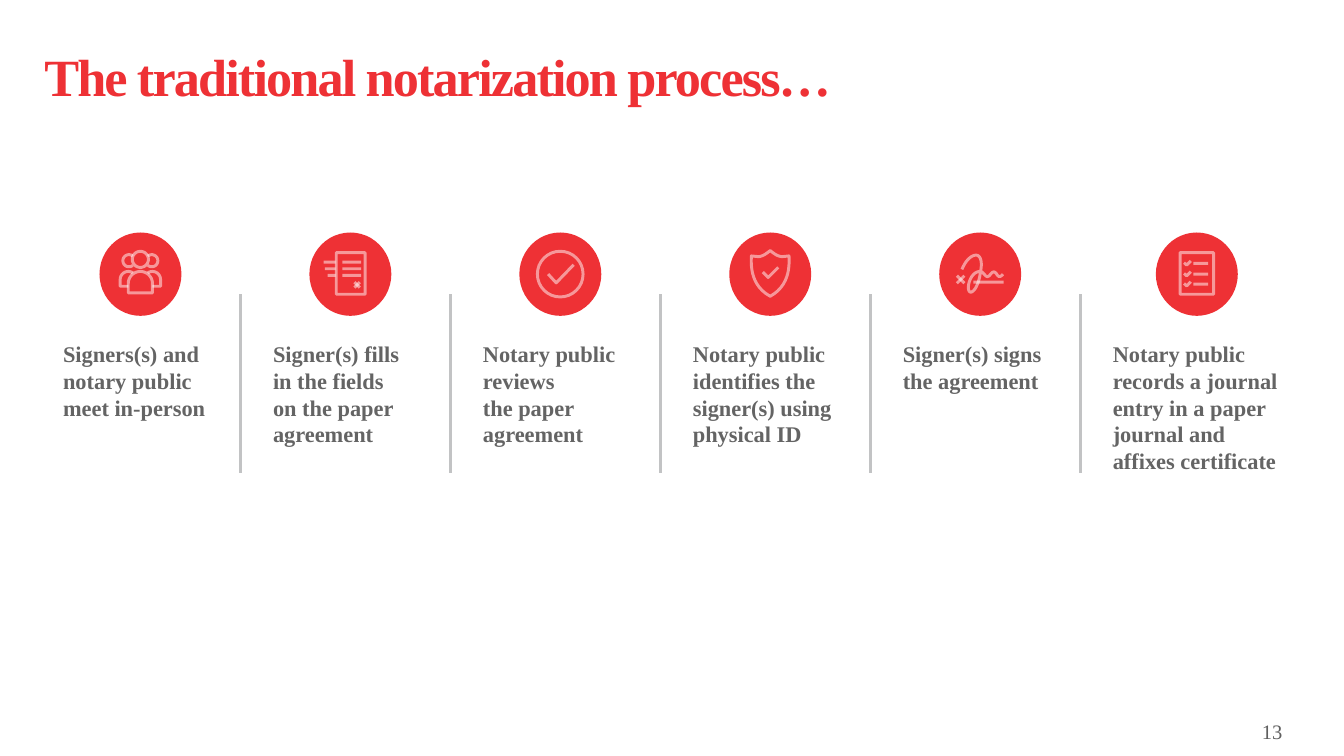
"""Build a slide showing the six steps of the traditional notarization process."""
from dataclasses import dataclass
from math import cos, radians, sin

from lxml.etree import SubElement
from pptx import Presentation
from pptx.dml.color import RGBColor as RGB
from pptx.enum.shapes import MSO_CONNECTOR as CONN, MSO_SHAPE as SHAPE
from pptx.enum.text import MSO_ANCHOR as ANCHOR, PP_ALIGN as ALIGN
from pptx.oxml.ns import qn
from pptx.util import Inches, Pt


@dataclass(frozen=True)
class Theme:
    font: str = "Times New Roman"
    red: str = "EE3135"
    body: str = "646464"
    number: str = "5F5F5F"
    rule: str = "C2C3C4"
    icon: str = "FFFFFF"
    icon_alpha: int = 50
    title_pt: int = 28
    body_pt: int = 12
    number_pt: int = 11
    rule_pt: float = 1.5
    icon_pt: float = 1.6


def arc(cx, cy, r, start=0, end=360, steps=32):
    angles = [radians(start + (end - start) * i / steps) for i in range(steps + 1)]
    return [(round(cx + r * cos(a), 2), round(cy + r * sin(a), 2)) for a in angles]


def curve(a, b, c, d, steps=12):
    ts = [i / steps for i in range(steps + 1)]
    return [tuple((1 - t) ** 3 * p + 3 * t * (1 - t) ** 2 * q + 3 * t * t * (1 - t) * u + t ** 3 * v
                  for p, q, u, v in zip(a, b, c, d)) for t in ts]


def box(x1, y1, x2, y2):
    return [(x1, y1), (x2, y1), (x2, y2), (x1, y2), (x1, y1)]


def cross(x, y, r):
    return [[(x - r, y - r), (x + r, y + r)], [(x - r, y + r), (x + r, y - r)]]


def mirror(points):
    return [(-x, y) for x, y in points]


def people():
    shoulder = [(-9, 9), (-15, 9)] + arc(-9, 4, 6, 180, 305)
    head = arc(-8.5, -10, 4.5, 50, 310)
    torso = [(-9, 14)] + arc(0, 7, 9, 180, 360) + [(9, 14), (-9, 14)]
    return [torso, arc(0, -11, 6), shoulder, mirror(shoulder), head, mirror(head)]


def document():
    rows = [(-20, -9), (-19, -4), (-17, 1)]
    lines = [[(x1, y), (x2, y)] for left, y in rows for x1, x2 in ((left, -11), (-6, 8))]
    return [box(-10.5, -16, 11, 15)] + lines + cross(5, 8, 2)


def approval():
    return [arc(0, 0, 17), [(-9, 0), (-3, 6.5), (10, -7)]]


def shield():
    side = curve((0, -17.5), (-3, -15), (-6, -13), (-9, -13))
    side += curve((-14, -13.5), (-14.5, -4), (-13.5, 9), (0, 16.5))
    return [side + mirror(side)[::-1], [(-5.5, -1.5), (-1.5, 2.5), (6, -5)]]


def signature():
    knots = [(-13.5, -3.5), (-11, -10), (-6, -15), (-2, -14),
             (2, -12), (1, -5), (0, 0), (-1, 7), (-4, 13), (-7, 13.5),
             (-11, 13), (-8, -2), (0, -2), (3, -2), (4, 4), (7, 1),
             (10, -3), (11, -2), (13, 1), (14, 2), (15, 2.5), (17, 0)]
    pen = [p for i in range(0, len(knots) - 1, 3) for p in curve(*knots[i:i + 4])]
    return [pen, [(-5, 6), (17.5, 6)]] + cross(-14.5, 4, 2.8)


def checklist():
    marks = [part for y in (-8, 0, 7.5) for part in
             ([(-2.5, y), (8.5, y)], [(-9.5, y - 0.5), (-7.5, y + 1.3), (-4.5, y - 1.8)])]
    return [box(-12.5, -16, 12.5, 15)] + marks


TITLE = "The traditional notarization process…"
PAGE = "13"
STEPS = [
    ("Signers(s) and notary public meet in-person", people),
    ("Signer(s) fills\vin the fields\von the paper agreement", document),
    ("Notary public reviews\nthe paper agreement", approval),
    ("Notary public identifies the signer(s) using physical ID", shield),
    ("Signer(s) signs the agreement", signature),
    ("Notary public records a journal entry in a paper journal and affixes certificate", checklist),
]
WIDTH = Inches(10)
HEIGHT = WIDTH * 9 // 16
LEFT, LAST_LEFT, COLUMN, LAST_EXTRA = 0.41, 8.22, 1.27, 0.1
PITCH = (LAST_LEFT - LEFT) / (len(STEPS) - 1)
TEXT_TOP, TEXT_H = 2.5, 0.64
DISC_W, DISC_H, DISC_Y = 0.61, 0.62, 2.04
RULE_OFFSET, RULE_TOP, RULE_BOTTOM = 1.38, 2.19, 3.52
THEME = Theme()


def inches(*values):
    return [Inches(v) for v in values]


def set_text(sp, text, color, size, bold=False, align=ALIGN.LEFT, **frame):
    tf = sp.text_frame
    tf.text = text
    for name, value in {"word_wrap": True, **frame}.items():
        setattr(tf, name, value)
    for p in tf.paragraphs:
        p.alignment = align
        for r in p.runs:
            for name, value in {"name": THEME.font, "size": Pt(size), "bold": bold}.items():
                setattr(r.font, name, value)
            r.font.color.rgb = RGB.from_string(color)
    return tf


def add_title(slide):
    sp = slide.shapes.title
    sp.left, sp.top, sp.width, sp.height = inches(0.33, 0.35, 9.2, 0.44)
    margins = {f"margin_{side}": 0 for side in ("left", "top", "right", "bottom")}
    tf = set_text(sp, TITLE, THEME.red, THEME.title_pt, True,
                  vertical_anchor=ANCHOR.BOTTOM, **margins)
    p = tf.paragraphs[0]
    p.line_spacing = 0.77
    p.runs[0].font._element.set("spc", "-100")


def add_rule(slide, x):
    line = slide.shapes.add_connector(CONN.STRAIGHT, *inches(x, RULE_TOP, x, RULE_BOTTOM))
    line.line.color.rgb = RGB.from_string(THEME.rule)
    line.line.width = Pt(THEME.rule_pt)
    SubElement(line._element.spPr, qn("a:effectLst"))


def add_icon(slide, strokes, cx):
    units = [[(x * 100, y * 100) for x, y in stroke] for stroke in strokes]
    builder = slide.shapes.build_freeform(*units[0][0], scale=Inches(1) / 10000)
    for i, points in enumerate(units):
        if i:
            builder.move_to(*points[0])
        builder.add_line_segments(points[1:], close=points[0] == points[-1])
    sp = builder.convert_to_shape(*inches(cx, DISC_Y))
    sp.shadow.inherit = False
    sp.fill.background()
    sp.line.width = Pt(THEME.icon_pt)
    sp.line.color.rgb = RGB.from_string(THEME.icon)
    color = sp.line._ln.find(".//" + qn("a:srgbClr"))
    SubElement(color, qn("a:alpha"), val=str(THEME.icon_alpha * 1000))


def add_step(slide, index, text, icon):
    x = LEFT + index * PITCH
    last = index == len(STEPS) - 1
    width = COLUMN + LAST_EXTRA * last
    cx = x + width / 2
    sp = slide.shapes.add_textbox(*inches(x, TEXT_TOP, width, TEXT_H))
    set_text(sp, text, THEME.body, THEME.body_pt, True,
             margin_left=Inches(0.06), margin_right=Inches(0.06),
             margin_top=Inches(0.03), margin_bottom=Inches(0.03))
    disc = slide.shapes.add_shape(
        SHAPE.OVAL, *inches(cx - DISC_W / 2, DISC_Y - DISC_H / 2, DISC_W, DISC_H))
    disc.shadow.inherit = False
    disc.fill.solid()
    disc.fill.fore_color.rgb = RGB.from_string(THEME.red)
    disc.line.fill.background()
    add_icon(slide, icon(), cx)
    if not last:
        add_rule(slide, x + RULE_OFFSET)


def main():
    prs = Presentation()
    prs.slide_width, prs.slide_height = WIDTH, HEIGHT
    slide = prs.slides.add_slide(prs.slide_layouts[5])
    add_title(slide)
    for index, (text, icon) in enumerate(STEPS):
        add_step(slide, index, text, icon)
    number = slide.shapes.add_textbox(*inches(8.75, 5.3, 0.89, 0.22))
    set_text(number, PAGE, THEME.number, THEME.number_pt, align=ALIGN.RIGHT)
    prs.save("out.pptx")


if __name__ == "__main__":
    main()
